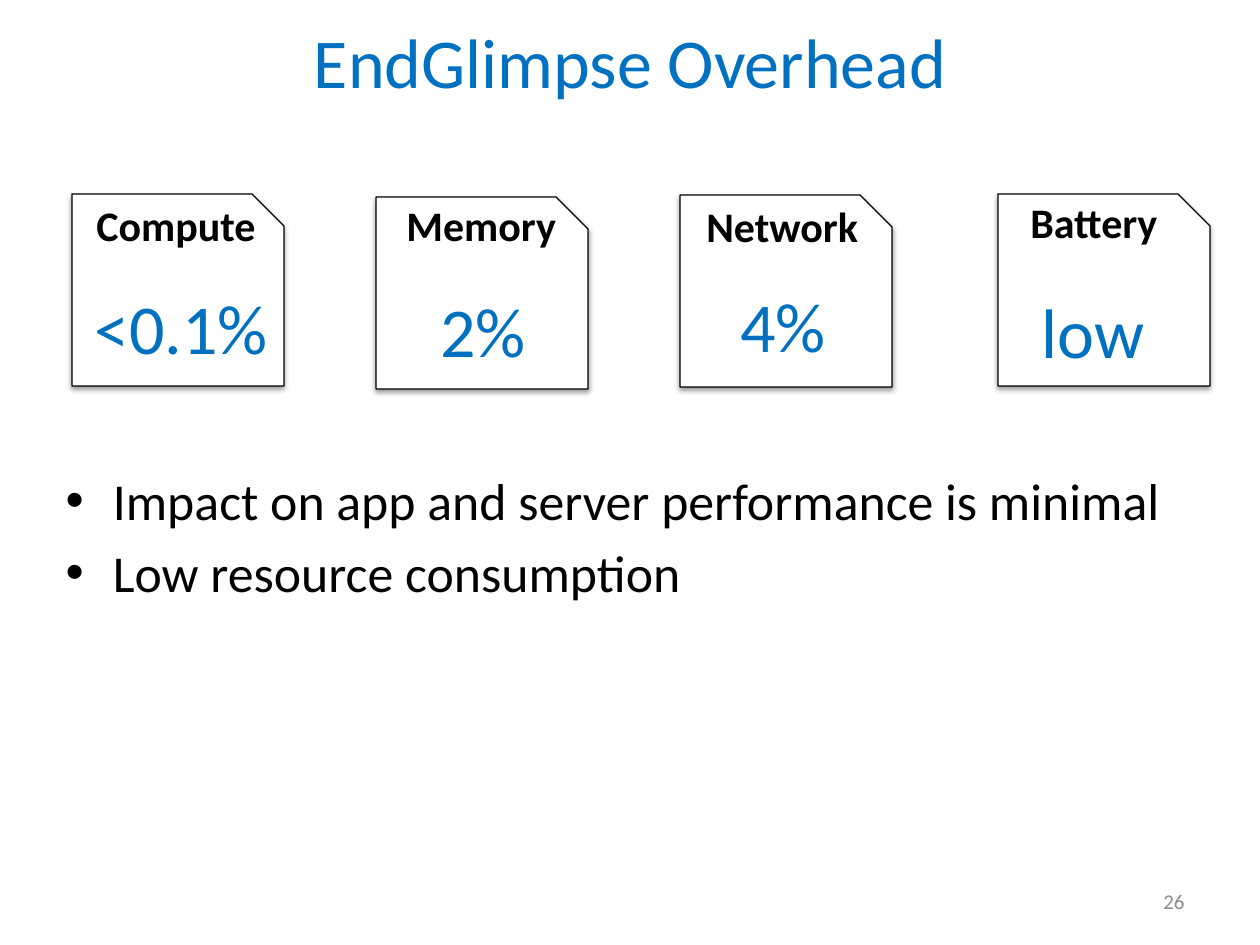
from lxml.etree import SubElement
from pptx import Presentation
from pptx.dml.color import RGBColor
from pptx.enum.shapes import MSO_SHAPE
from pptx.enum.text import MSO_ANCHOR, MSO_AUTO_SIZE, PP_ALIGN
from pptx.oxml.ns import qn
from pptx.util import Inches, Pt

THEME = {
    "paper": RGBColor(255, 255, 255),
    "ink": RGBColor(0, 0, 0),
    "title": {"color": RGBColor(0, 112, 192), "size": Pt(40), "bold": False},
    "label": {"color": RGBColor(0, 0, 0), "size": Pt(24), "bold": True},
    "value": {"color": RGBColor(0, 112, 192), "size": Pt(40), "bold": False},
    "body": {"color": RGBColor(0, 0, 0), "size": Pt(29.6), "bold": False},
    "number": {"color": RGBColor(140, 140, 140), "size": Pt(12), "bold": False},
}
PIXEL = Inches(1) / 126


def place(shape, *box):
    for side, length in zip(("left", "top", "width", "height"), box):
        setattr(shape, side, round(length * PIXEL))


def write(shape, lines, style, **frame_format):
    frame = shape.text_frame
    frame.text = "\n".join(lines)
    for name, setting in frame_format.items():
        setattr(frame, name, setting)
    for paragraph in frame.paragraphs:
        font = paragraph.runs[0].font
        font.color.rgb = THEME[style]["color"]
        for name in ("size", "bold"):
            setattr(font, name, THEME[style][name])
        font.name = "Calibri"


presentation = Presentation()
presentation.slide_width = Inches(10)
presentation.slide_height = Inches(7.5)
slide = presentation.slides.add_slide(presentation.slide_layouts[1])
title, body = slide.placeholders

place(title, 63, 6, 1134, 110)
write(title, ["EndGlimpse Overhead"], "title",
      vertical_anchor=MSO_ANCHOR.MIDDLE, auto_size=MSO_AUTO_SIZE.NONE)

place(body, 53, 462, 1134, 158)
write(body, ["Impact on app and server performance is minimal",
             "Low resource consumption"], "body", auto_size=MSO_AUTO_SIZE.NONE)

cards = [
    ((72, 194), "Compute", (84, 193, 194), "<0.1%", (82, 278, 200)),
    ((376, 197), "Memory", (394, 193, 179), "2%", (428, 281, 112)),
    ((680, 195), "Network", (694, 194, 186), "4%", (728, 276, 112)),
    ((998, 194), "Battery", (1018, 190, 164), "low", (1029, 282, 130)),
]
for corner, label, label_box, value, value_box in cards:
    card = slide.shapes.add_shape(MSO_SHAPE.SNIP_1_RECTANGLE, 0, 0, 0, 0)
    place(card, *corner, 212, 192)
    card.fill.solid()
    card.fill.fore_color.rgb = THEME["paper"]
    card.line.color.rgb = THEME["ink"]
    card.line.width = Pt(0.75)
    card.shadow.inherit = False
    effects = card._element.spPr.find(qn("a:effectLst"))
    shadow = SubElement(effects, qn("a:outerShdw"), blurRad=str(Pt(3.1)),
                        dist=str(Pt(1.6)), dir="5400000", rotWithShape="0")
    color = SubElement(shadow, qn("a:srgbClr"), val=str(THEME["ink"]))
    SubElement(color, qn("a:alpha"), val="38000")

    for text, style, box, height in ((label, "label", label_box, 63),
                                     (value, "value", value_box, 97)):
        text_box = slide.shapes.add_textbox(0, 0, 0, 0)
        place(text_box, *box, height)
        write(text_box, [text], style, word_wrap=False,
              auto_size=MSO_AUTO_SIZE.SHAPE_TO_FIT_TEXT)

number = slide.shapes.add_textbox(0, 0, 0, 0)
place(number, 903, 876, 294, 50)
write(number, ["26"], "number", word_wrap=True, vertical_anchor=MSO_ANCHOR.MIDDLE)
number.text_frame.paragraphs[0].alignment = PP_ALIGN.RIGHT

presentation.save("out.pptx")
